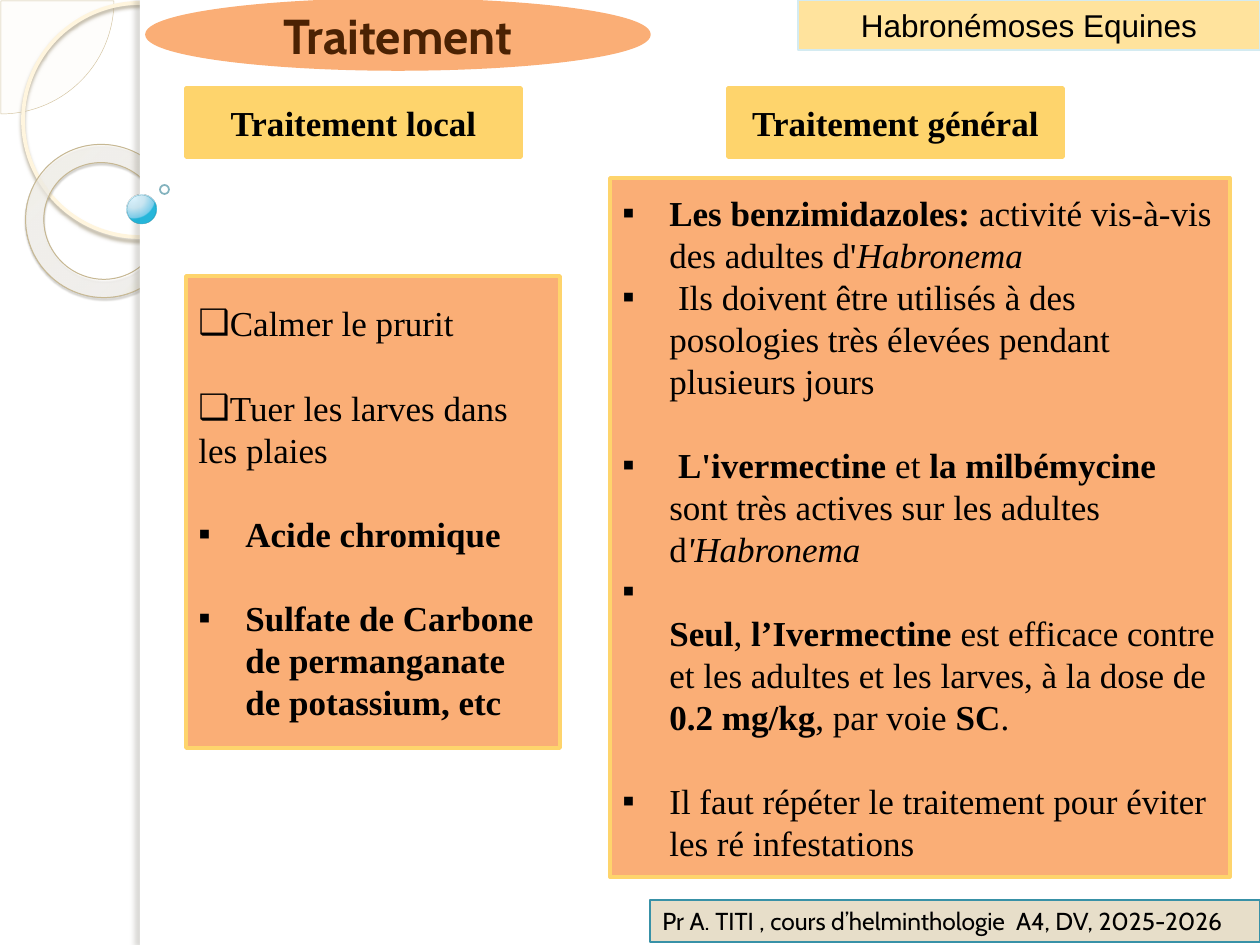
"""Build the slide on local and general treatment of equine habronemosis."""
import pptx
import pptx.dml.color
import pptx.enum.shapes
import pptx.enum.text
import pptx.oxml
import pptx.oxml.ns
import pptx.util
from lxml import etree

PX = 914400 / 126
W, H = 1260, 945
SHAPE = pptx.enum.shapes.MSO_SHAPE
ALIGN = pptx.enum.text.PP_ALIGN
NS = 'xmlns:a="http://schemas.openxmlformats.org/drawingml/2006/main"'
SERIF, SANS, TITLE = "Times New Roman", "Arial", "Cabin"
BLACK, WHITE, ORANGE, YELLOW = "000000", "FFFFFF", "FAAE76", "FED46C"
LINE_PT, INDENT = 24, 47

DONUT_FILL = ([(0, "FFFCF6", 70), (70, "FFFEFB", 55), (100, "F0D28E", 60)], (-408, -50, 508, 150))
BALL_FILL = ([(0, "DAF4FF", 95), (50, "C3E3F0", 90), (95, "6BC7E8", 88), (100, "00ABD5", 85)],
             (25, 12, 75, 88))

# shape, box, fill (colour, alpha) or gradient, line (colour, pt, alpha), shadow, rotation, adjustments
DECOR = [
    (SHAPE.PIE, (-112, -112, 226, 226), ("FEFAF4", 33), ("D3C39F", 0.25, 100), None, 0, (0, 54.02)),
    (SHAPE.OVAL, (23, 3, 234, 234), None, ("FFF5DE", 2.15, 100), ("B0A68F", 85, 2, 2, 90), 0, ()),
    (SHAPE.DONUT, (25, 145, 155, 152), DONUT_FILL, ("C7B893", 0.58, 100),
     ("5A5444", 35, 1, 1.2, 75), 38.6, (0.12,)),
    (SHAPE.RECTANGLE, (140, 0, W - 140, H), (WHITE, 100), None, None, 0, ()),
    (SHAPE.RECTANGLE, (140, 0, 10, H), (WHITE, 100), None, ("736F63", 25, 3, 3, 180), 0, ()),
    (SHAPE.OVAL, (127, 195, 29, 29), BALL_FILL, ("308EA5", 0.16, 60), None, 0, ()),
    (SHAPE.OVAL, (160, 185, 9, 9), None, ("318093", 1, 60), None, 0, ()),
]

# shape, box, fill, line colour, line pt, text, font, size, colour, bold, alignment
LABELS = [
    (SHAPE.RECTANGLE, (798, 0, 462, 50), "FFE39D", "D4EBF1", 0.75,
     "Habronémoses Equines", SANS, 18, BLACK, False, ALIGN.CENTER),
    (SHAPE.OVAL, (147, 0, 502, 69), ORANGE, ORANGE, 2,
     "Traitement", TITLE, 28, "4B2203", True, ALIGN.CENTER),
    (SHAPE.RECTANGLE, (186, 88, 335, 69), YELLOW, YELLOW, 2,
     "Traitement local", SERIF, 20, BLACK, True, ALIGN.CENTER),
    (SHAPE.RECTANGLE, (728, 88, 335, 69), YELLOW, YELLOW, 2,
     "Traitement général", SERIF, 20, BLACK, True, ALIGN.CENTER),
    (SHAPE.RECTANGLE, (650, 900, 610, 42), "E7DEC9", "3891A7", 0.75,
     "Pr A. TITI , cours d’helminthologie  A4, DV, 2025-2026", TITLE, 14, BLACK, False, ALIGN.LEFT),
]

# box, paragraphs: bullet, indent, blank lines before, runs (text, style)
PANELS = [
    ((186, 276, 374, 472), [
        ("❑", 0, 0, [("Calmer le prurit", "")]),
        ("❑", 0, 1, [("Tuer les larves dans les plaies", "")]),
        ("▪", INDENT, 1, [("Acide chromique", "b")]),
        ("▪", INDENT, 1, [("Sulfate de Carbone de permanganate de potassium, etc", "b")]),
    ]),
    ((610, 178, 620, 699), [
        ("▪", INDENT, 0, [("Les benzimidazoles: ", "b"), ("activité vis-à-vis des adultes d'", ""),
                          ("Habronema", "i")]),
        ("▪", INDENT, 0, [(" Ils doivent être utilisés à des posologies très élevées "
                           "pendant plusieurs jours", "")]),
        ("▪", INDENT, 1, [(" ", ""), ("L'ivermectine ", "b"), ("et ", ""), ("la milbémycine ", "b"),
                          ("sont très actives sur les adultes d", ""), ("'Habronema", "i")]),
        ("▪", INDENT, 0, [(" ", ""), ("\n", ""), ("Seul", "b"), (", ", ""), ("l’Ivermectine ", "b"),
                          ("est efficace contre et les adultes et les larves, à la dose de ", ""),
                          ("0.2 mg/kg", "b"), (", par voie ", ""), ("SC", "b"), (".", "")]),
        ("▪", INDENT, 1, [("Il faut répéter le traitement pour éviter les ré infestations", "")]),
    ]),
]


def px(n):
    return pptx.util.Emu(round(n * PX))


def rgb(value):
    return pptx.dml.color.RGBColor.from_string(value)


def colour_xml(value, alpha):
    return f'<a:srgbClr {NS} val="{value}"><a:alpha val="{alpha * 1000}"/></a:srgbClr>'


def paint(fill, value, alpha, parent):
    fill.solid()
    fill.fore_color.rgb = rgb(value)
    if alpha < 100:
        clr = parent.find(pptx.oxml.ns.qn("a:solidFill"))[0]
        etree.SubElement(clr, pptx.oxml.ns.qn("a:alpha"), val=str(alpha * 1000))


def paint_gradient(s, stops, rect):
    s.fill.solid()
    left, top, right, bottom = (n * 1000 for n in rect)
    gs = "".join(f'<a:gs pos="{pos * 1000}">{colour_xml(c, a)}</a:gs>' for pos, c, a in stops)
    grad = pptx.oxml.parse_xml(
        f'<a:gradFill {NS} rotWithShape="1"><a:gsLst>{gs}</a:gsLst><a:path path="circle">'
        f'<a:fillToRect l="{left}" t="{top}" r="{right}" b="{bottom}"/></a:path></a:gradFill>')
    spPr = s._element.spPr
    spPr.replace(spPr.find(pptx.oxml.ns.qn("a:solidFill")), grad)


def add_shadow(s, value, alpha, blur, dist, angle):
    effects = s._element.spPr.find(pptx.oxml.ns.qn("a:effectLst"))
    effects.append(pptx.oxml.parse_xml(
        f'<a:outerShdw {NS} blurRad="{round(blur * 12700)}" dist="{round(dist * 12700)}" '
        f'dir="{angle * 60000}" algn="tl" rotWithShape="0">{colour_xml(value, alpha)}</a:outerShdw>'))


def add_shape(slide, kind, box, fill, line):
    s = slide.shapes.add_shape(kind, *map(px, box))
    s.shadow.inherit = False
    if fill is None:
        s.fill.background()
    elif isinstance(fill[0], list):
        paint_gradient(s, *fill)
    else:
        paint(s.fill, *fill, s._element.spPr)
    if line is None:
        s.line.fill.background()
    else:
        value, width, alpha = line
        s.line.width = pptx.util.Pt(width)
        paint(s.line.fill, value, alpha, s._element.spPr.find(pptx.oxml.ns.qn("a:ln")))
    return s


def add_run(p, text, font, size, colour, bold, italic=False):
    r = p.add_run()
    r.text = text
    r.font.name, r.font.size = font, pptx.util.Pt(size)
    r.font.bold, r.font.italic = bold, italic
    r.font.color.rgb = rgb(colour)


def add_bullet(p, char, indent):
    pPr = p._p.get_or_add_pPr()
    pPr.set("marL", str(px(indent)))
    pPr.set("indent", str(px(-indent)))
    etree.SubElement(pPr, pptx.oxml.ns.qn("a:buFont"), typeface=SANS)
    etree.SubElement(pPr, pptx.oxml.ns.qn("a:buChar"), char=char)


def add_panel(slide, box, paragraphs):
    s = add_shape(slide, SHAPE.RECTANGLE, box, (ORANGE, 100), (YELLOW, 2, 100))
    tf = s.text_frame
    tf.vertical_anchor = pptx.enum.text.MSO_ANCHOR.MIDDLE
    for i, (char, indent, gap, runs) in enumerate(paragraphs):
        p = tf.add_paragraph() if i else tf.paragraphs[0]
        p.alignment = ALIGN.LEFT
        p.line_spacing = pptx.util.Pt(LINE_PT)
        p.space_before = pptx.util.Pt(gap * LINE_PT)
        add_bullet(p, char, indent)
        for text, style in runs:
            if text == "\n":
                p.add_line_break()
            else:
                add_run(p, text, SERIF, 20, BLACK, style == "b", style == "i")


def main():
    prs = pptx.Presentation()
    prs.slide_width, prs.slide_height = px(W), px(H)
    slide = prs.slides.add_slide(prs.slide_layouts[6])
    for kind, box, fill, line, shadow, rotation, adjustments in DECOR:
        s = add_shape(slide, kind, box, fill, line)
        s.rotation = rotation
        for i, value in enumerate(adjustments):
            s.adjustments[i] = value
        if shadow:
            add_shadow(s, *shadow)
    for kind, box, fill, edge, width, text, font, size, colour, bold, align in LABELS:
        s = add_shape(slide, kind, box, (fill, 100), (edge, width, 100))
        tf = s.text_frame
        tf.vertical_anchor = pptx.enum.text.MSO_ANCHOR.MIDDLE
        p = tf.paragraphs[0]
        p.alignment = align
        add_run(p, text, font, size, colour, bold)
    for box, paragraphs in PANELS:
        add_panel(slide, box, paragraphs)
    prs.save("out.pptx")


if __name__ == "__main__":
    main()
